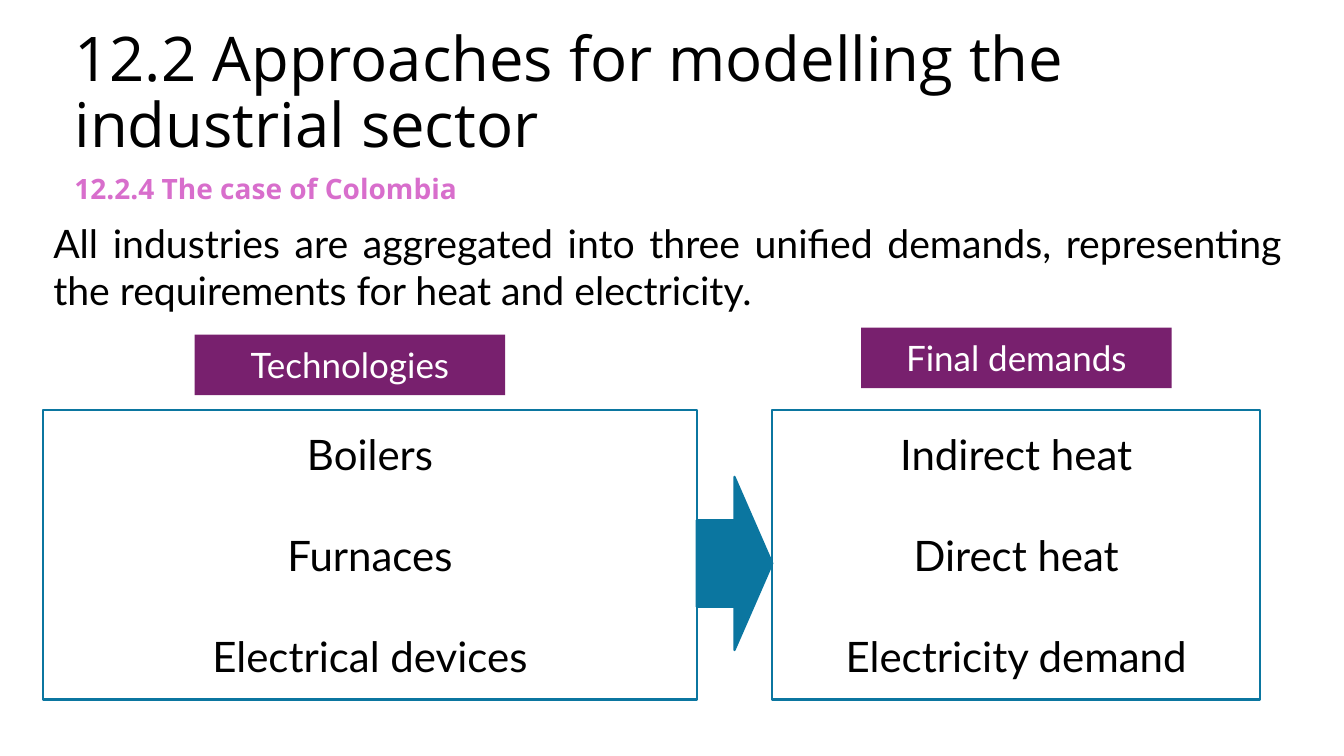
from pptx import Presentation
from pptx.dml.color import RGBColor
from pptx.enum.shapes import MSO_SHAPE
from pptx.enum.text import MSO_ANCHOR, MSO_AUTO_SIZE, PP_ALIGN
from pptx.util import Pt

PX = 9144  # EMU per px, 100 px to the inch
RECT, ARROW = MSO_SHAPE.RECTANGLE, MSO_SHAPE.RIGHT_ARROW
LEFT, CENTER, JUSTIFY = PP_ALIGN.LEFT, PP_ALIGN.CENTER, PP_ALIGN.JUSTIFY
TITLE_ONLY = 5
BLACK, WHITE, PINK = "000000", "FFFFFF", "D86ECC"
PURPLE, BLUE = "78206E", "0B76A0"


def write(sp, lines, size, font, color, align, anchor, gap=0):
    tf = sp.text_frame
    tf.word_wrap = True
    tf.auto_size = MSO_AUTO_SIZE.NONE
    tf.vertical_anchor = anchor
    tf.text = "\n".join(lines)
    for i, p in enumerate(tf.paragraphs):
        p.alignment = align
        p.space_before = Pt(gap if i else 0)
        p.font.size = Pt(size)
        p.font.name = font
        p.font.color.rgb = RGBColor.from_string(color)
    return tf.paragraphs[0]


def add_block(kind, x, y, w, h, fill=None, line=None):
    sp = s.shapes.add_shape(kind, x * PX, y * PX, w * PX, h * PX)
    sp.shadow.inherit = False
    if fill:
        sp.fill.solid()
        sp.fill.fore_color.rgb = RGBColor.from_string(fill)
    else:
        sp.fill.background()
    if line:
        sp.line.color.rgb = RGBColor.from_string(line)
        sp.line.width = Pt(1.5)
    else:
        sp.line.fill.background()
    return sp


prs = Presentation()
prs.slide_width, prs.slide_height = 1333 * PX, 750 * PX
s = prs.slides.add_slide(prs.slide_layouts[TITLE_ONLY])

# Title
title = s.shapes.title
title.left, title.top, title.width, title.height = 64 * PX, 12 * PX, 1133 * PX, 153 * PX
p = write(title, ["12.2 Approaches for modelling the industrial sector"],
          44, "Open Sans", BLACK, LEFT, MSO_ANCHOR.BOTTOM)
p.line_spacing = 0.9

# Subtitle and introduction
subtitle = s.shapes.add_textbox(64 * PX, 165 * PX, 680 * PX, 44 * PX)
p = write(subtitle, ["12.2.4 The case of Colombia"],
          20, "Open Sans", PINK, LEFT, MSO_ANCHOR.TOP)
p.font.bold = True
intro = s.shapes.add_textbox(43 * PX, 213 * PX, 1238 * PX, 104 * PX)
write(intro, ["All industries are aggregated into three unified demands, "
              "representing the requirements for heat and electricity."],
      28, "Lato", BLACK, JUSTIFY, MSO_ANCHOR.TOP)

# Headed boxes: heading, heading x and y, box x and width, items
columns = [
    ("Technologies", 193, 332, 43, 648,
     ["Boilers", "Furnaces", "Electrical devices"]),
    ("Final demands", 854, 325, 766, 484,
     ["Indirect heat", "Direct heat", "Electricity demand"]),
]
for heading, head_x, head_y, box_x, box_w, items in columns:
    sp = add_block(RECT, head_x, head_y, 308, 60, fill=PURPLE)
    write(sp, [heading], 25, "Lato", WHITE, CENTER, MSO_ANCHOR.MIDDLE)
    sp = add_block(RECT, box_x, 407, box_w, 287, line=BLUE)
    write(sp, items, 30, "Lato", BLACK, CENTER, MSO_ANCHOR.MIDDLE, gap=36)

# Arrow between the boxes
add_block(ARROW, 691, 473, 75, 172, fill=BLUE, line=BLUE)

prs.save("out.pptx")
